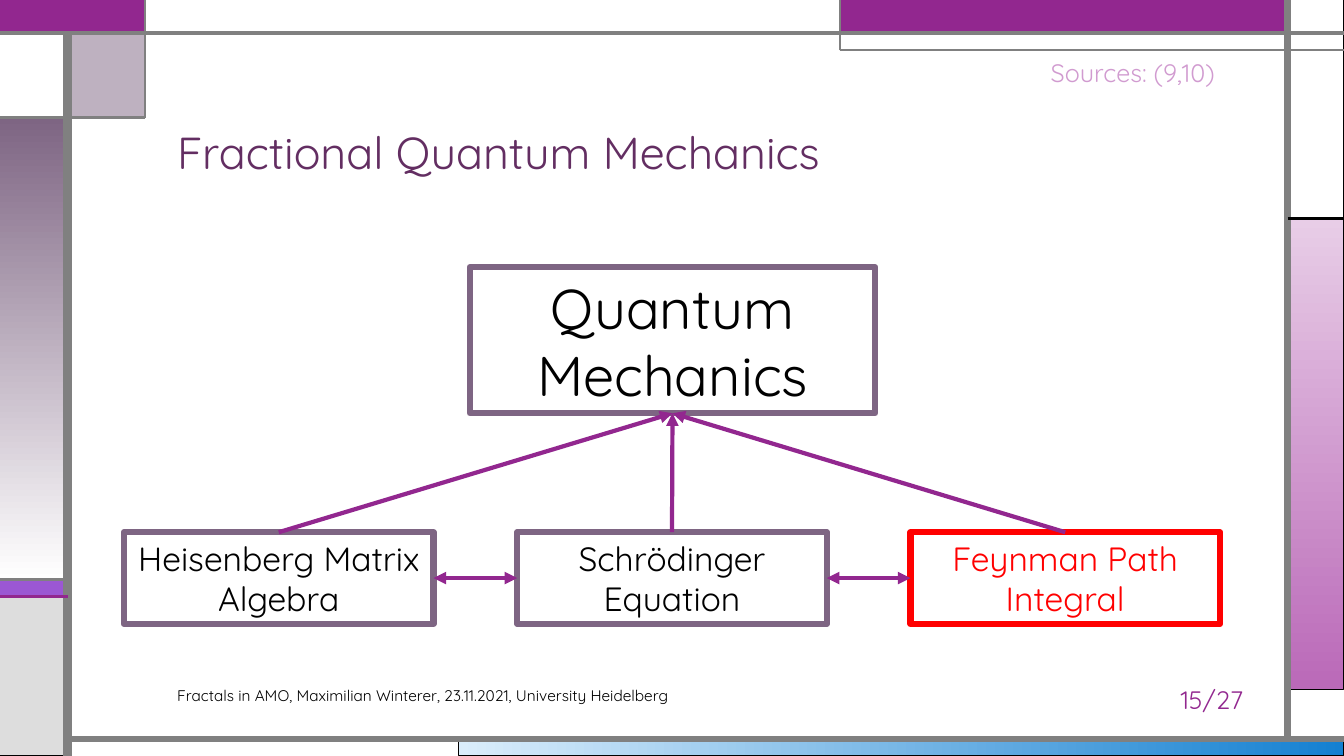
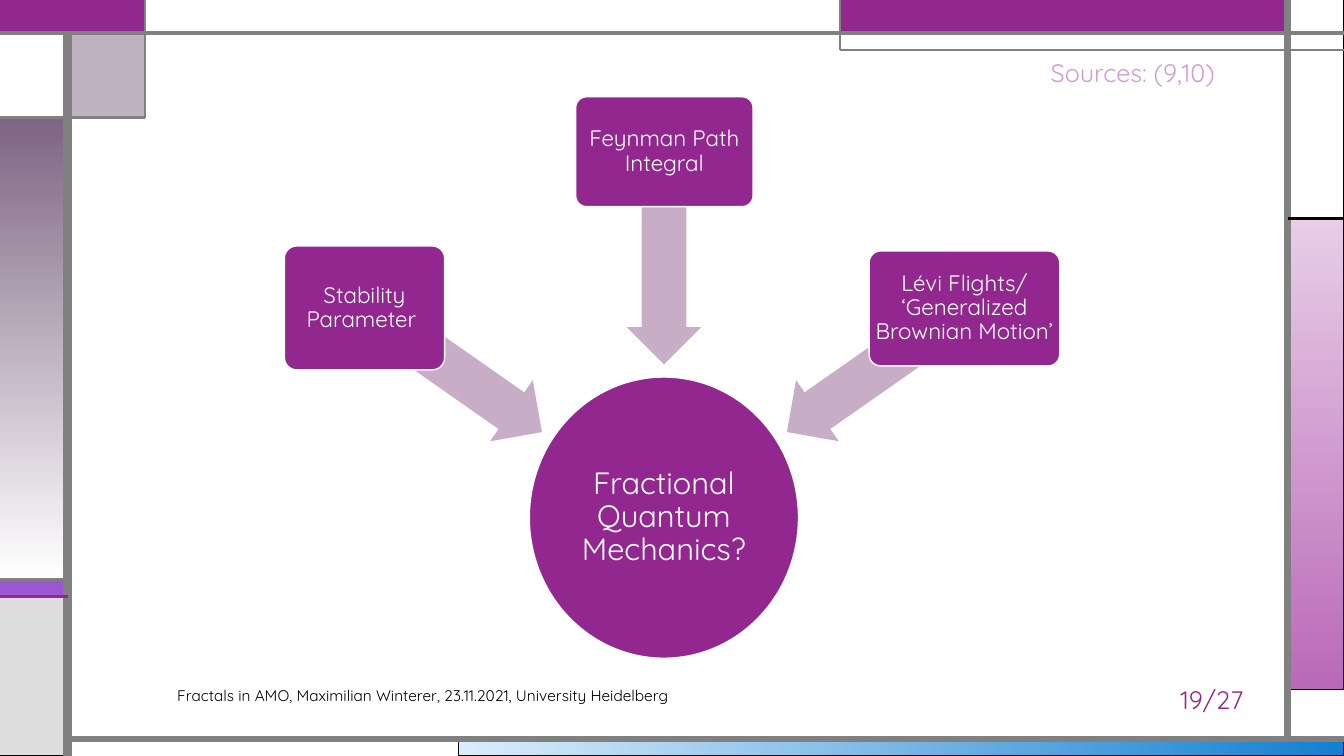
import pptx
import pptx.util
import pptx.dml.color
import pptx.enum.shapes
import pptx.enum.text
import pptx.oxml
import pptx.oxml.ns
import lxml.etree

Inches = pptx.util.Inches
SHAPE = pptx.enum.shapes.MSO_SHAPE
ALIGN = pptx.enum.text.PP_ALIGN
ANCHOR = pptx.enum.text.MSO_ANCHOR

FONT = "Quicksand"
WIDTH, HEIGHT = 13.33, 7.5
COLORS = {
    "white": "FFFFFF", "black": "000000", "gray": "808080", "silver": "DDDDDD",
    "red": "FF0000", "magenta": "92278F", "plum": "632E62", "mauve": "7E6583",
    "violet": "9B57D3", "indigo": "755DD9", "orchid": "BA69B8", "lilac": "E8CDE7",
    "pink": "D19BD0", "arrow": "C7ADC6", "ice": "DAEDFB", "blue": "1480D1",
}

# Grid of the frame
LEFT, CORNER, NOTCH, RIGHT = 0.67, 1.44, 8.33, 12.77
TOP, LEDGE, SQUARE, PANEL, STRIPE, PLINTH, BOTTOM = 0.33, 0.5, 1.17, 2.17, 5.75, 5.92, 7.33

# left, top, right, bottom, fill (two names: gradient), angle or None, line, line width
FRAME_BLOCKS = [
    (4.55, BOTTOM, WIDTH, HEIGHT, ("ice", "blue"), 0, "black", 0.75),
    (RIGHT, PANEL, WIDTH, 6.84, ("lilac", "orchid"), 270, "black", 0.75),
    (0, STRIPE, LEFT, PLINTH, "violet", None, "black", 0.75),
    (0, PLINTH, LEFT, HEIGHT, "silver", None, "black", 0.75),
    (RIGHT, 0, WIDTH, PANEL, "white", None, "black", 0.75),
    (NOTCH, 0, RIGHT, TOP, "magenta", None, "indigo", 0.75),
    (LEFT, TOP, CORNER, SQUARE, "mauve", None, "black", 0.75),
    (0, SQUARE, LEFT, STRIPE, ("mauve", "white"), 270, "black", 0.75),
    (0, TOP, LEFT, SQUARE, "white", None, "black", 0.75),
    (0, 0, CORNER, TOP, "magenta", None, "magenta", 1.5),
    (CORNER, 0, NOTCH, TOP, "white", None, "gray", 0.75),
]
TRANSLUCENT_BLOCK = 6

# start x, start y, end x, end y, colour, width
FRAME_LINES = [
    (LEFT, HEIGHT, LEFT, TOP, "gray", 6),
    (LEFT, BOTTOM, WIDTH, BOTTOM, "gray", 4.5),
    (RIGHT, BOTTOM, RIGHT, 0, "gray", 4.5),
    (0, TOP, WIDTH, TOP, "gray", 3),
    (WIDTH, LEDGE, NOTCH, LEDGE, "gray", 1.5),
    (NOTCH, LEDGE, NOTCH, 0, "gray", 1.5),
    (RIGHT, PANEL, WIDTH, PANEL, "black", 2.25),
    (CORNER, 0, CORNER, SQUARE, "gray", 1.5),
    (CORNER, SQUARE, 0, SQUARE, "gray", 2.25),
    (LEFT, STRIPE, 0, STRIPE, "gray", 2.25),
    (LEFT, PLINTH, 0, PLINTH, "magenta", 2.25),
]


def rgb(name):
    return pptx.dml.color.RGBColor.from_string(COLORS[name])


def add_block(page, kind, at, fill=None, angle=None, line=None, line_width=0.75):
    """Add a preset shape; a pair of colours as fill makes a gradient."""
    block = page.shapes.add_shape(kind, *map(Inches, at))
    block.shadow.inherit = False
    if fill is None:
        block.fill.background()
    elif isinstance(fill, tuple):
        block.fill.gradient()
        block.fill.gradient_angle = angle
        for stop, name in zip(block.fill.gradient_stops, fill):
            stop.color.rgb = rgb(name)
    else:
        block.fill.solid()
        block.fill.fore_color.rgb = rgb(fill)
    if line:
        block.line.color.rgb = rgb(line)
        block.line.width = pptx.util.Pt(line_width)
    else:
        block.line.fill.background()
    return block


def set_opacity(block, percent):
    color = block._element.spPr.find(".//" + pptx.oxml.ns.qn("a:srgbClr"))
    alpha = lxml.etree.SubElement(color, pptx.oxml.ns.qn("a:alpha"))
    alpha.set("val", str(percent * 1000))


def add_line(page, start, end, color, width, arrows=()):
    """Add a straight line; arrows lists headEnd (start) and tailEnd (end)."""
    line = page.shapes.add_connector(
        pptx.enum.shapes.MSO_CONNECTOR.STRAIGHT, *map(Inches, start + end))
    line.line.color.rgb = rgb(color)
    line.line.width = pptx.util.Pt(width)
    for arrow in arrows:
        tip = lxml.etree.SubElement(line.line._get_or_add_ln(), pptx.oxml.ns.qn("a:" + arrow))
        tip.set("type", "triangle")
    lxml.etree.SubElement(line._element.spPr, pptx.oxml.ns.qn("a:effectLst"))
    return line


def link(page, source, source_site, target, target_site, arrows):
    arrow = add_line(page, (0, 0), (1, 1), "magenta", 3, arrows)
    arrow.begin_connect(source, source_site)
    arrow.end_connect(target, target_site)


def write(box, text, size, color, align=ALIGN.CENTER, anchor=ANCHOR.MIDDLE,
          spacing=None, inset=None):
    frame = box.text_frame
    frame.word_wrap = True
    frame.vertical_anchor = anchor
    if inset is not None:
        frame.margin_left = frame.margin_right = Inches(inset)
        frame.margin_top = frame.margin_bottom = Inches(inset)
    para = frame.paragraphs[0]
    para.text = text
    para.alignment = align
    if spacing:
        para.line_spacing = spacing
    para.font.name = FONT
    para.font.size = pptx.util.Pt(size)
    para.font.color.rgb = rgb(color)


def add_text(page, at, text, size, color, **style):
    write(page.shapes.add_textbox(*map(Inches, at)), text, size, color, **style)


def move_frame_to_layout(page):
    """Draw the frame on the empty page, then hand it to the page's layout."""
    for index, (left, top, right, bottom, *look) in enumerate(FRAME_BLOCKS):
        at = (left, top, right - left, bottom - top)
        block = add_block(page, SHAPE.RECTANGLE, at, *look)
        if index == TRANSLUCENT_BLOCK:
            set_opacity(block, 50)
    for x1, y1, x2, y2, color, width in FRAME_LINES:
        add_line(page, (x1, y1), (x2, y2), color, width)
    layout = page.slide_layout
    for holder in list(layout.placeholders):
        layout.shapes._spTree.remove(holder._element)
    for shape in list(page.shapes):
        layout.shapes._spTree.append(shape._element)


def add_notes_line(page, number):
    """Add the footer, page number and sources."""
    add_text(page, (1.66, 6.75, 7.5, 0.3),
             "Fractals in AMO, Maximilian Winterer, 23.11.2021, University Heidelberg",
             11, "black", align=ALIGN.LEFT)
    add_text(page, (11.31, 6.74, 1.42, 0.4), f"{number}/27", 18, "magenta")
    add_text(page, (10.21, 0.52, 2.05, 0.4), "Sources: (9,10)", 18, "pink")


def add_outlined_box(page, at, text, size, line="mauve", color="black"):
    box = add_block(page, SHAPE.RECTANGLE, at, line=line, line_width=4.5)
    write(box, text, size, color)
    return box


def build_formulations(page):
    add_text(page, (1.66, 0.58, 10.5, 1.25), "Fractional Quantum Mechanics", 32, "plum",
             align=ALIGN.LEFT, anchor=ANCHOR.BOTTOM, spacing=0.9)
    theory = add_outlined_box(page, (4.66, 2.65, 4.02, 1.45), "Quantum Mechanics", 40)
    formulations = [
        ("Heisenberg Matrix Algebra", "mauve", "black"),
        ("Schrödinger Equation", "mauve", "black"),
        ("Feynman Path Integral", "red", "red"),
    ]
    boxes = [add_outlined_box(page, (1.23 + 3.9 * column, 5.28, 3.07, 0.91), text, 24, line, color)
             for column, (text, line, color) in enumerate(formulations)]
    top, left, bottom, right = range(4)
    for box in boxes:
        link(page, box, top, theory, bottom, ["tailEnd"])
    for box, neighbor in zip(boxes, boxes[1:]):
        link(page, box, right, neighbor, left, ["headEnd", "tailEnd"])


def build_ingredients(page):
    goal = add_block(page, SHAPE.OVAL, (5.25, 3.74, 2.67, 2.79), "magenta", line="white", line_width=1)
    write(goal, "Fractional Quantum Mechanics?", 22, "white", spacing=0.9, inset=0.02)
    ingredients = [
        ("Stability Parameter ", (2.82, 2.44, 1.59, 1.23), (3.42, 3.3, 2.15, 0.74), 215),
        ("Feynman Path Integral", (5.71, 0.96, 1.76, 1.09), (5.53, 2.19, 2.11, 0.74), 270),
        ("Lévi Flights/ ‘Generalized Brownian Motion’",
         (8.62, 2.49, 1.89, 1.14), (7.61, 3.3, 2.15, 0.74), 325),
    ]
    for text, box_at, arrow_at, rotation in ingredients:
        arrow = add_block(page, SHAPE.LEFT_ARROW, arrow_at, "arrow")
        arrow.adjustments[0], arrow.adjustments[1] = 0.6, 0.5
        arrow.rotation = rotation
        box = add_block(page, SHAPE.ROUNDED_RECTANGLE, box_at, "magenta", line="white", line_width=1)
        box.adjustments[0] = 0.1
        write(box, text, 16, "white", spacing=0.9, inset=0.03)


def main():
    deck = pptx.Presentation()
    deck.slide_width, deck.slide_height = Inches(WIDTH), Inches(HEIGHT)
    blank = deck.slide_layouts[6]
    pages = [(15, build_formulations), (19, build_ingredients)]
    for index, (number, build) in enumerate(pages):
        page = deck.slides.add_slide(blank)
        if index == 0:
            move_frame_to_layout(page)
        build(page)
        add_notes_line(page, number)
    deck.save("out.pptx")


if __name__ == "__main__":
    main()
